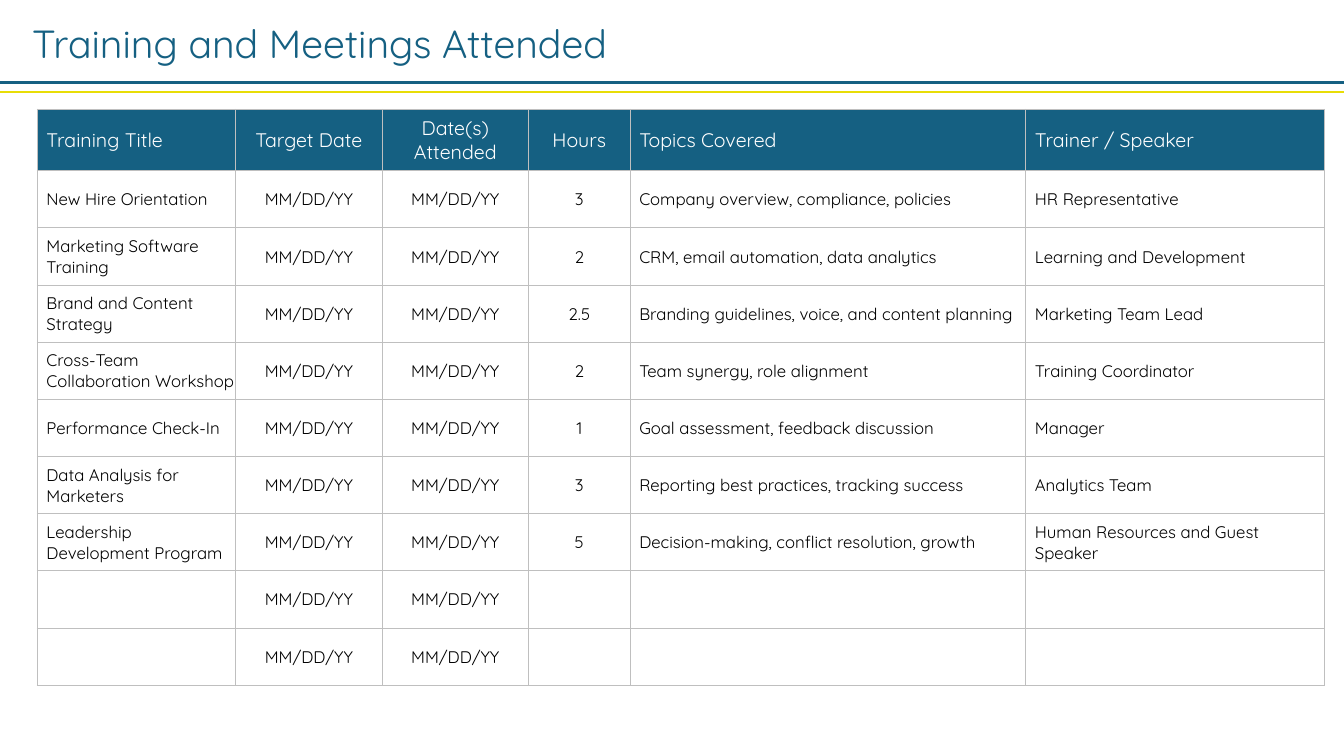
"""Build the slide listing trainings and meetings attended."""
from dataclasses import dataclass

from lxml.etree import SubElement
from pptx import Presentation
from pptx.dml.color import RGBColor
from pptx.enum.shapes import MSO_CONNECTOR as Connector
from pptx.enum.text import MSO_ANCHOR as Anchor, MSO_AUTO_SIZE as AutoSize, PP_ALIGN as Align
from pptx.oxml.ns import qn
from pptx.slide import Slide
from pptx.table import _Cell as Cell
from pptx.text.text import TextFrame
from pptx.util import Cm, Pt

FONT = "Quicksand"
BLUE, YELLOW, GREY = "156082", "E8DD06", "BFBFBF"
WHITE, BLACK = "FFFFFF", "000000"
SLIDE_WIDTH, SLIDE_HEIGHT = 33.87, 19.05
HEADER_HEIGHT, SESSION_HEIGHT = 1.55, 1.44
DATE = "MM/DD/YY"


@dataclass(frozen=True)
class Column:
    heading: str
    width: float
    centred: bool = False


@dataclass(frozen=True)
class Session:
    title: str = ""
    hours: str = ""
    topics: str = ""
    trainer: str = ""

    def values(self) -> list[str]:
        return [self.title, DATE, DATE, self.hours, self.topics, self.trainer]


@dataclass(frozen=True)
class Rule:
    top: float
    color: str


COLUMNS = [
    Column("Training Title", 5.0),
    Column("Target Date", 3.69, centred=True),
    Column("Date(s) Attended", 3.69, centred=True),
    Column("Hours", 2.56, centred=True),
    Column("Topics Covered", 9.97),
    Column("Trainer / Speaker", 7.53),
]
SESSIONS = [
    Session("New Hire Orientation", "3", "Company overview, compliance, policies", "HR Representative"),
    Session("Marketing Software Training", "2", "CRM, email automation, data analytics",
            "Learning and Development"),
    Session("Brand and Content Strategy", "2.5", "Branding guidelines, voice, and content planning",
            "Marketing Team Lead"),
    Session("Cross-Team Collaboration Workshop", "2", "Team synergy, role alignment",
            "Training Coordinator"),
    Session("Performance Check-In", "1", "Goal assessment, feedback discussion", "Manager"),
    Session("Data Analysis for Marketers", "3", "Reporting best practices, tracking success",
            "Analytics Team"),
    Session("Leadership Development Program", "5", "Decision-making, conflict resolution, growth",
            "Human Resources and Guest Speaker"),
    Session(),
    Session(),
]
RULES = [Rule(2.08, BLUE), Rule(2.31, YELLOW)]


def rgb(color: str) -> RGBColor:
    return RGBColor.from_string(color)


def write(frame: TextFrame, wording: str, size: float, color: str, align: Align = Align.LEFT) -> None:
    frame.text = wording
    for paragraph in frame.paragraphs:
        paragraph.alignment = align
        for run in paragraph.runs:
            run.font.name = FONT
            run.font.size = Pt(size)
            run.font.color.rgb = rgb(color)


def draw_title(slide: Slide, wording: str) -> None:
    title = slide.shapes.add_textbox(Cm(0.56), Cm(0.36), Cm(20.52), Cm(1.45))
    title.text_frame.word_wrap = True
    title.text_frame.auto_size = AutoSize.SHAPE_TO_FIT_TEXT
    write(title.text_frame, wording, 28, BLUE)


def draw_rule(slide: Slide, rule: Rule) -> None:
    line = slide.shapes.add_connector(
        Connector.STRAIGHT, Cm(0), Cm(rule.top), Cm(SLIDE_WIDTH), Cm(rule.top))
    line.line.color.rgb = rgb(rule.color)
    line.line.width = Pt(1.5)
    SubElement(line._element.spPr, qn("a:effectLst"))


def draw_borders(cell: Cell) -> None:
    properties = cell._tc.get_or_add_tcPr()
    for side in ("a:lnL", "a:lnR", "a:lnT", "a:lnB"):
        border = SubElement(properties, qn(side), w=str(Pt(0.5)))
        fill = SubElement(border, qn("a:solidFill"))
        SubElement(fill, qn("a:srgbClr"), val=GREY)


def fill_cell(cell: Cell, column: Column, wording: str, is_header: bool) -> None:
    draw_borders(cell)
    if is_header or column.centred:
        cell.fill.solid()
        cell.fill.fore_color.rgb = rgb(BLUE if is_header else WHITE)
    else:
        cell.fill.background()
    cell.vertical_anchor = Anchor.MIDDLE
    cell.margin_left = Cm(0.02 if column.centred else 0.23)
    cell.margin_right = cell.margin_top = Cm(0.02)
    cell.margin_bottom = Cm(0)
    write(cell.text_frame, wording, 14 if is_header else 12, WHITE if is_header else BLACK,
          Align.CENTER if column.centred else Align.LEFT)


def draw_sessions(slide: Slide, columns: list[Column], sessions: list[Session]) -> None:
    rows = [[column.heading for column in columns]] + [session.values() for session in sessions]
    width = sum(column.width for column in columns)
    height = HEADER_HEIGHT + SESSION_HEIGHT * len(sessions)
    log = slide.shapes.add_table(
        len(rows), len(columns), Cm(0.94), Cm(2.75), Cm(width), Cm(height)).table
    log.first_row = log.horz_banding = False
    for index, column in enumerate(columns):
        log.columns[index].width = Cm(column.width)
    for row_index, wordings in enumerate(rows):
        is_header = row_index == 0
        log.rows[row_index].height = Cm(HEADER_HEIGHT if is_header else SESSION_HEIGHT)
        for column_index, (column, wording) in enumerate(zip(columns, wordings)):
            fill_cell(log.cell(row_index, column_index), column, wording, is_header)


def main() -> None:
    deck = Presentation()
    deck.slide_width, deck.slide_height = Cm(SLIDE_WIDTH), Cm(SLIDE_HEIGHT)
    slide = deck.slides.add_slide(deck.slide_layouts[6])
    draw_title(slide, "Training and Meetings Attended")
    for rule in RULES:
        draw_rule(slide, rule)
    draw_sessions(slide, COLUMNS, SESSIONS)
    deck.save("out.pptx")


if __name__ == "__main__":
    main()
